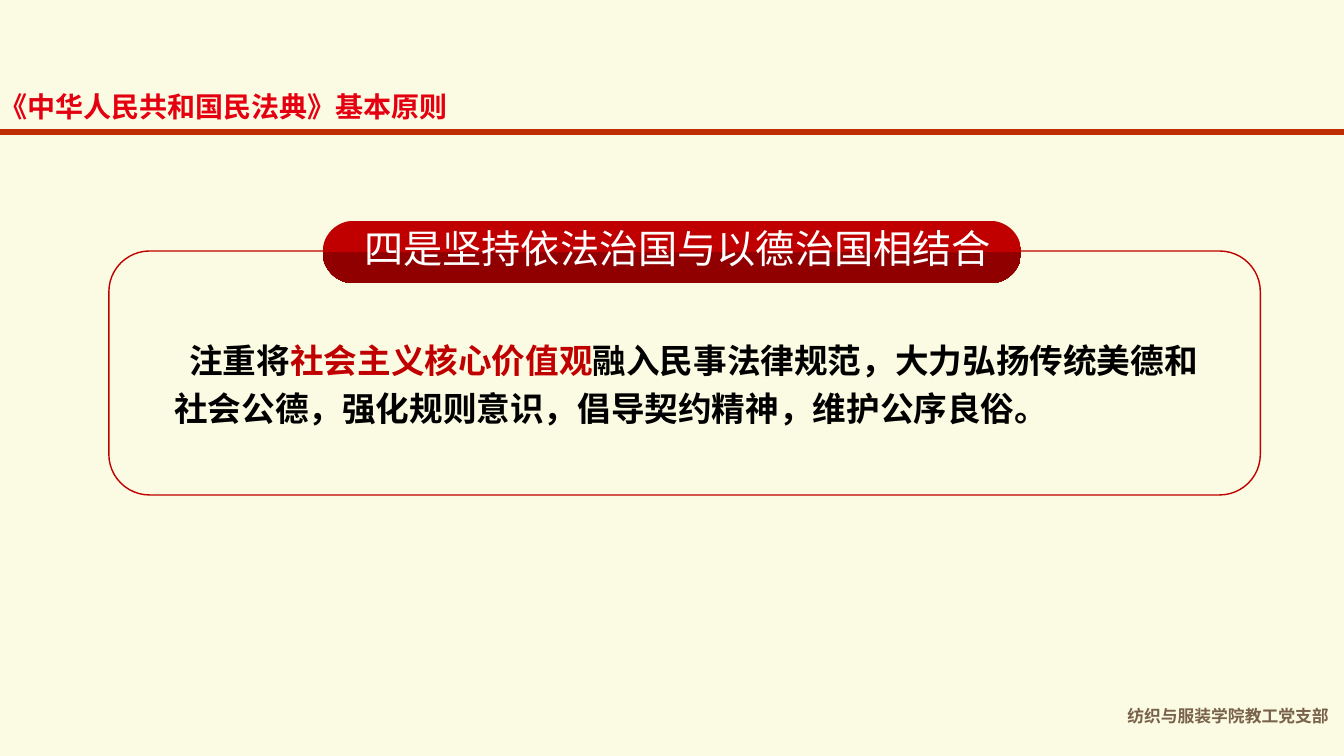
from copy import deepcopy

from lxml import etree
from pptx import Presentation
from pptx.dml.color import RGBColor
from pptx.enum.shapes import MSO_CONNECTOR, MSO_SHAPE
from pptx.enum.text import MSO_ANCHOR, PP_ALIGN
from pptx.oxml.ns import qn
from pptx.util import Inches, Pt

ROUNDED = MSO_SHAPE.ROUNDED_RECTANGLE
STRAIGHT = MSO_CONNECTOR.STRAIGHT
TOP = MSO_ANCHOR.TOP
LEFT, CENTER = PP_ALIGN.LEFT, PP_ALIGN.CENTER

CREAM = RGBColor(0xFB, 0xFA, 0xE2)
RUST = RGBColor(0xBF, 0x2D, 0x05)
BRIGHT_RED = RGBColor(0xE5, 0x00, 0x11)
RED = RGBColor(0xC0, 0x00, 0x00)
DARK_RED = RGBColor(0x90, 0x00, 0x00)
BROWN = RGBColor(0x79, 0x62, 0x4B)
WHITE = RGBColor(0xFF, 0xFF, 0xFF)
BLACK = RGBColor(0x00, 0x00, 0x00)
FONT = "Noto Sans CJK SC"

TITLE = [("《中华人民共和国民法典》基本原则", BRIGHT_RED)]
HEADING = [("四是坚持依法治国与以德治国相结合", WHITE)]
PRINCIPLE = [
    ("注重将", BLACK),
    ("社会主义核心价值观", RED),
    ("融入民事法律规范，大力弘扬传统美德和社会公德，强化规则意识，倡导契约精神，维护公序良俗。", BLACK),
]
BRANCH = [("纺织与服装学院教工党支部", BROWN)]
BAND_STOPS = [(0, RED), (0.5, RED), (0.51, DARK_RED), (1, DARK_RED)]

WIDTH, HEIGHT = 13.33, 7.5
RULE_Y = 1.31


def place(shape, box):
    """Move a shape to a left, top, width, height box in inches."""
    shape.left, shape.top, shape.width, shape.height = map(Inches, box)


def write(shape, parts, size, bold=True, align=LEFT, wrap=True):
    """Fill a shape with one paragraph of coloured runs and return it."""
    frame = shape.text_frame
    frame.word_wrap = wrap
    frame.vertical_anchor = TOP
    paragraph = frame.paragraphs[0]
    paragraph.alignment = align
    for words, color in parts:
        run = paragraph.add_run()
        run.text = words
        run.font.size = Pt(size)
        run.font.bold = bold
        run.font.name = FONT
        run.font.color.rgb = color
        etree.SubElement(run.font._element, qn("a:ea"), typeface=FONT)
    return paragraph


def add_rounded(slide, box):
    """Add a rounded rectangle without a shadow."""
    shape = slide.shapes.add_shape(ROUNDED, *map(Inches, box))
    shape.shadow.inherit = False
    return shape


def fill_band(shape, stops):
    """Give a shape a top-to-bottom gradient with the given stops."""
    shape.fill.gradient()
    shape.fill.gradient_angle = 270
    stop_list = shape._element.spPr.find(qn("a:gradFill")).find(qn("a:gsLst"))
    for _ in range(len(stops) - len(stop_list)):
        stop_list.append(deepcopy(stop_list[0]))
    for stop, (position, color) in zip(shape.fill.gradient_stops, stops):
        stop.position = position
        stop.color.rgb = color


def main():
    """Build the slide and save it."""
    deck = Presentation()
    deck.slide_width, deck.slide_height = Inches(WIDTH), Inches(HEIGHT)
    slide = deck.slides.add_slide(deck.slide_layouts[5])
    slide.background.fill.solid()
    slide.background.fill.fore_color.rgb = CREAM

    rule = slide.shapes.add_connector(
        STRAIGHT, 0, Inches(RULE_Y), Inches(WIDTH), Inches(RULE_Y))
    rule.line.color.rgb = RUST
    rule.line.width = Pt(4)
    etree.SubElement(rule._element.spPr, qn("a:effectLst"))

    title = slide.shapes.title
    place(title, (-0.11, 0.84, 6.3, 0.44))
    write(title, TITLE, 20)

    panel = add_rounded(slide, (1.08, 2.49, 11.42, 2.42))
    panel.fill.background()
    panel.line.color.rgb = RED
    panel.line.width = Pt(1)

    band = add_rounded(slide, (3.2, 2.19, 6.93, 0.62))
    band.adjustments[0] = 0.5
    fill_band(band, BAND_STOPS)
    band.line.fill.background()

    heading = slide.shapes.add_textbox(*map(Inches, (3.48, 2.18, 6.48, 0.57)))
    write(heading, HEADING, 28, bold=False, align=CENTER, wrap=False)

    principle = slide.shapes.add_textbox(*map(Inches, (1.63, 3.24, 10.55, 1.07)))
    paragraph = write(principle, PRINCIPLE, 24)
    paragraph.line_spacing = 1.2
    paragraph._p.get_or_add_pPr().set("indent", str(Inches(0.15)))

    branch = slide.shapes.add_textbox(*map(Inches, (11.07, 6.95, 2.22, 0.34)))
    write(branch, BRANCH, 12, align=CENTER)

    deck.save("out.pptx")


if __name__ == "__main__":
    main()
